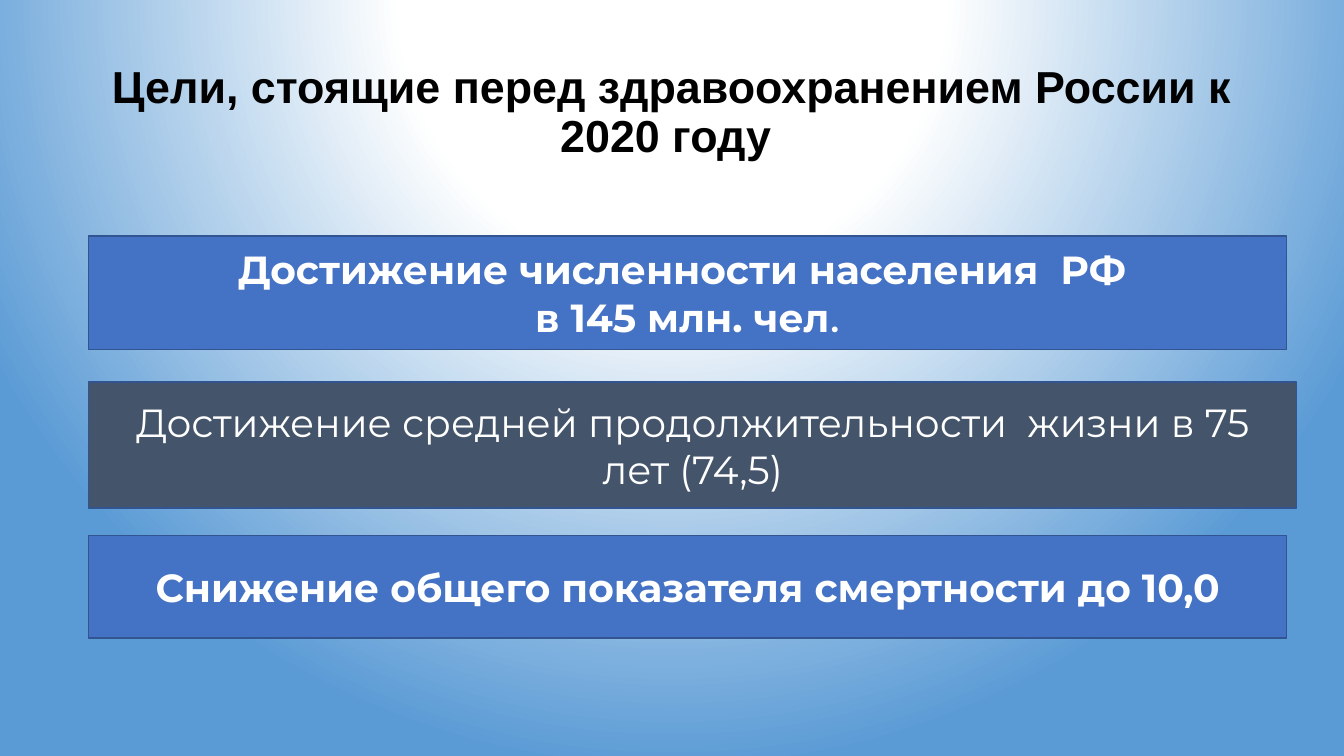
import pptx
import pptx.util
import pptx.dml.color
import pptx.enum.shapes
import pptx.enum.text
import pptx.oxml
import pptx.oxml.ns

Pt = pptx.util.Pt

# Content: each goal has top, width, height, fill and lines of (text, bold, font)
TITLE = "Цели, стоящие перед здравоохранением России к 2020 году "
GOALS = [
    (168.5, 855.4, 81.4, "blue", [
        [("Достижение численности населения  РФ ", True, "body")],
        [("в 145 млн. чел", True, "body"), (".", True, "dot")],
    ]),
    (272.9, 862.6, 90, "slate", [
        [("Достижение средней продолжительности  жизни в 75 лет (74,5)",
          False, "body")],
    ]),
    (382.3, 855.4, 73.4, "blue", [
        [("Снижение общего показателя смертности до 10,0", True, "body")],
    ]),
]
LEFT = 63.4

THEME = {
    "color": {"blue": "4472C4", "slate": "44546A", "edge": "325491",
              "white": "FFFFFF", "black": "000000"},
    "font": {"head": "Arial", "body": "Montserrat", "dot": "Calibri"},
    "size": {"head": 32, "body": 28},
    "glow": [(0, "FFFFFF"), (35, "FFFFFF"), (100, "5B9BD5")],
    "focus": {"l": 50, "t": -80, "r": 50, "b": 180},
}


def tint(name):
    return pptx.dml.color.RGBColor.from_string(THEME["color"][name])


def add_run(para, text, font, size, color, bold):
    para.alignment = pptx.enum.text.PP_ALIGN.CENTER
    run = para.add_run()
    run.text = text
    run.font.name = THEME["font"][font]
    run.font.size = Pt(THEME["size"][size])
    run.font.bold = bold
    run.font.color.rgb = tint(color)


def set_frame(shape):
    frame = shape.text_frame
    frame.word_wrap = True
    frame.auto_size = pptx.enum.text.MSO_AUTO_SIZE.NONE
    frame.vertical_anchor = pptx.enum.text.MSO_ANCHOR.MIDDLE
    return frame


def paint_back(slide):
    slide.background.fill.gradient()
    grad = slide.element.xpath(".//p:bg//a:gradFill")[0]
    stops = "".join(
        f'<a:gs pos="{pos * 1000}"><a:srgbClr val="{color}"/></a:gs>'
        for pos, color in THEME["glow"])
    focus = " ".join(f'{side}="{val * 1000}"'
                     for side, val in THEME["focus"].items())
    glow = pptx.oxml.parse_xml(
        f'<a:gradFill {pptx.oxml.ns.nsdecls("a")} rotWithShape="1">'
        f'<a:gsLst>{stops}</a:gsLst>'
        f'<a:path path="circle"><a:fillToRect {focus}/></a:path>'
        '</a:gradFill>')
    grad.getparent().replace(grad, glow)


def add_goal(slide, top, width, height, fill, lines):
    box = slide.shapes.add_shape(
        pptx.enum.shapes.MSO_SHAPE.RECTANGLE,
        Pt(LEFT), Pt(top), Pt(width), Pt(height))
    box.shadow.inherit = False
    box.fill.solid()
    box.fill.fore_color.rgb = tint(fill)
    box.line.color.rgb = tint("edge")
    box.line.width = Pt(1)
    frame = set_frame(box)
    for num, line in enumerate(lines):
        para = frame.add_paragraph() if num else frame.paragraphs[0]
        for text, bold, font in line:
            add_run(para, text, font, "body", "white", bold)


def main():
    deck = pptx.Presentation()
    deck.slide_width, deck.slide_height = Pt(960), Pt(540)
    slide = deck.slides.add_slide(deck.slide_layouts[5])
    paint_back(slide)

    # Title
    title = slide.shapes.title
    title.left, title.top = Pt(66), Pt(28.8)
    title.width, title.height = Pt(828), Pt(104.4)
    para = set_frame(title).paragraphs[0]
    para.line_spacing = 0.9
    add_run(para, TITLE, "head", "head", "black", True)

    # Goal bars
    for goal in GOALS:
        add_goal(slide, *goal)

    deck.save("out.pptx")


if __name__ == "__main__":
    main()
